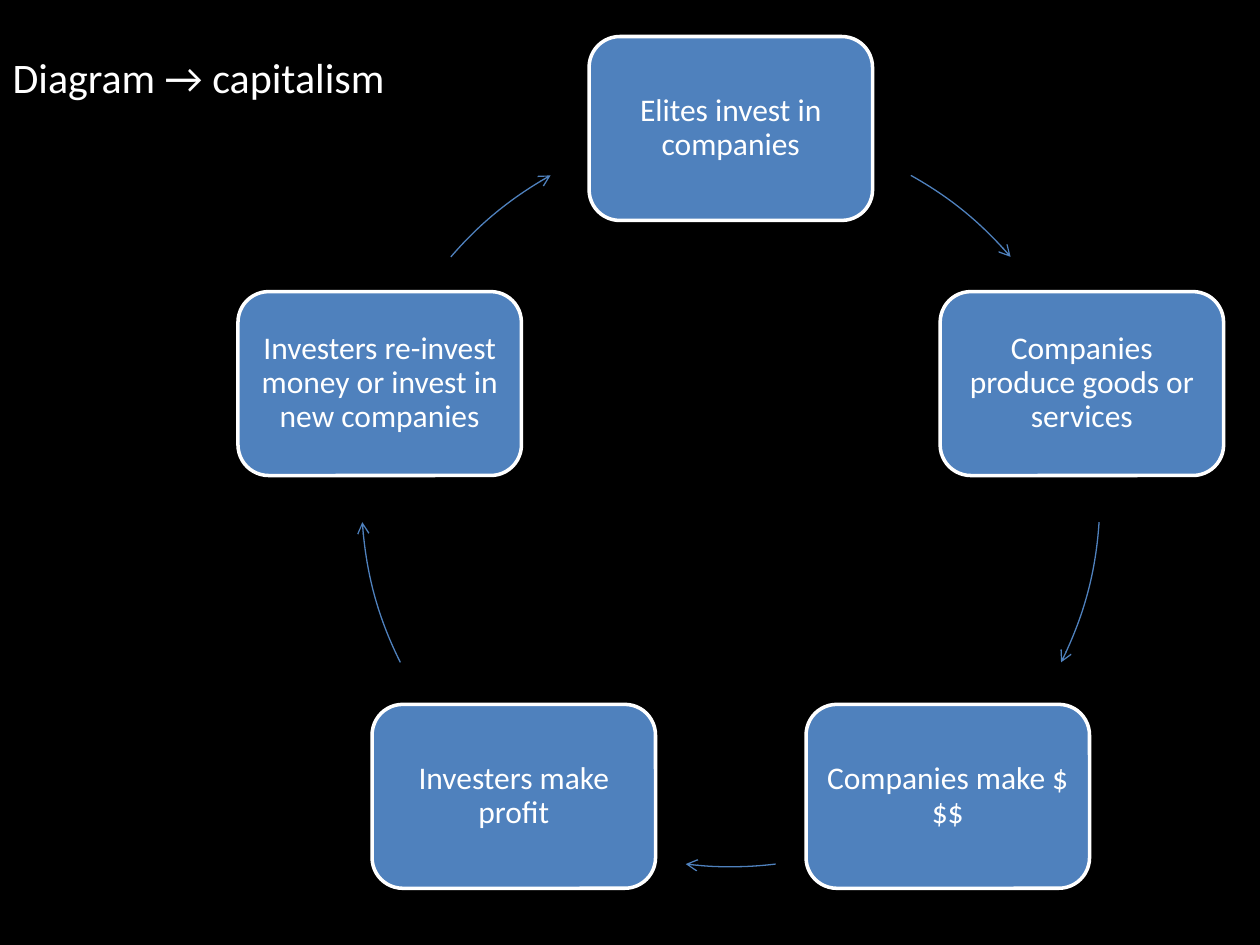
from math import cos, radians, sin
from lxml import etree
from pptx import Presentation
from pptx.dml.color import RGBColor
from pptx.enum.shapes import MSO_SHAPE as SHAPE
from pptx.enum.text import MSO_ANCHOR as ANCHOR, MSO_AUTO_SIZE as AUTO_SIZE, PP_ALIGN as ALIGN
from pptx.oxml.ns import qn
from pptx.util import Inches, Pt

COLORS = {"background": "000000", "box": "4F81BD", "text": "FFFFFF"}
CENTER_X, CENTER_Y, RADIUS = 5.8, 3.95, 2.93
BOX_WIDTH, BOX_HEIGHT = 2.25, 1.46

STEPS = [
    ("Elites invest in companies", -60.8, -40.7),
    ("Companies produce goods or services", 3.8, 26.5),
    ("Companies make $$$", 83, 97),
    ("Investers make profit", 153.5, 176.2),
    ("Investers re-invest money or invest in new companies", 220.7, 240.8),
]


def color(name):
    return RGBColor.from_string(COLORS[name])


def format_text(paragraph, size, alignment):
    paragraph.alignment = alignment
    paragraph.font.name = "Calibri"
    paragraph.font.size = Pt(size)
    paragraph.font.color.rgb = color("text")


presentation = Presentation()
presentation.slide_width = Inches(10)
presentation.slide_height = Inches(7.5)
slide = presentation.slides.add_slide(presentation.slide_layouts[5])
slide.background.fill.solid()
slide.background.fill.fore_color.rgb = color("background")

title = slide.shapes.title
title.left, title.top = Inches(0), Inches(0.36)
title.width, title.height = Inches(3.2), Inches(0.5)
title.text_frame.text = "Diagram → capitalism"
title.text_frame.word_wrap = False
title.text_frame.auto_size = AUTO_SIZE.NONE
title.text_frame.vertical_anchor = ANCHOR.TOP
format_text(title.text_frame.paragraphs[0], 24, ALIGN.LEFT)

for index, (text, arc_start, arc_end) in enumerate(STEPS):
    angle = radians(index * 360 / len(STEPS) - 90)
    box = slide.shapes.add_shape(
        SHAPE.ROUNDED_RECTANGLE,
        Inches(CENTER_X + RADIUS * cos(angle) - BOX_WIDTH / 2),
        Inches(CENTER_Y + RADIUS * sin(angle) - BOX_HEIGHT / 2),
        Inches(BOX_WIDTH),
        Inches(BOX_HEIGHT),
    )
    box.shadow.inherit = False
    box.fill.solid()
    box.fill.fore_color.rgb = color("box")
    box.line.color.rgb = color("text")
    box.line.width = Pt(2)

    frame = box.text_frame
    frame.text = text
    frame.word_wrap = True
    frame.vertical_anchor = ANCHOR.MIDDLE
    frame.margin_left = frame.margin_right = Inches(0.07)
    frame.margin_top = frame.margin_bottom = Inches(0.07)
    paragraph = frame.paragraphs[0]
    paragraph.line_spacing = 0.9
    format_text(paragraph, 18, ALIGN.CENTER)

    arc = slide.shapes.add_shape(
        SHAPE.ARC,
        Inches(CENTER_X - RADIUS),
        Inches(CENTER_Y - RADIUS),
        Inches(2 * RADIUS),
        Inches(2 * RADIUS),
    )
    arc.adjustments[0] = arc_start % 360 * 0.6
    arc.adjustments[1] = arc_end % 360 * 0.6
    arc.shadow.inherit = False
    arc.fill.background()
    arc.line.color.rgb = color("box")
    arc.line.width = Pt(0.75)
    etree.SubElement(arc.line._get_or_add_ln(), qn("a:tailEnd"), type="arrow")

presentation.save("out.pptx")
